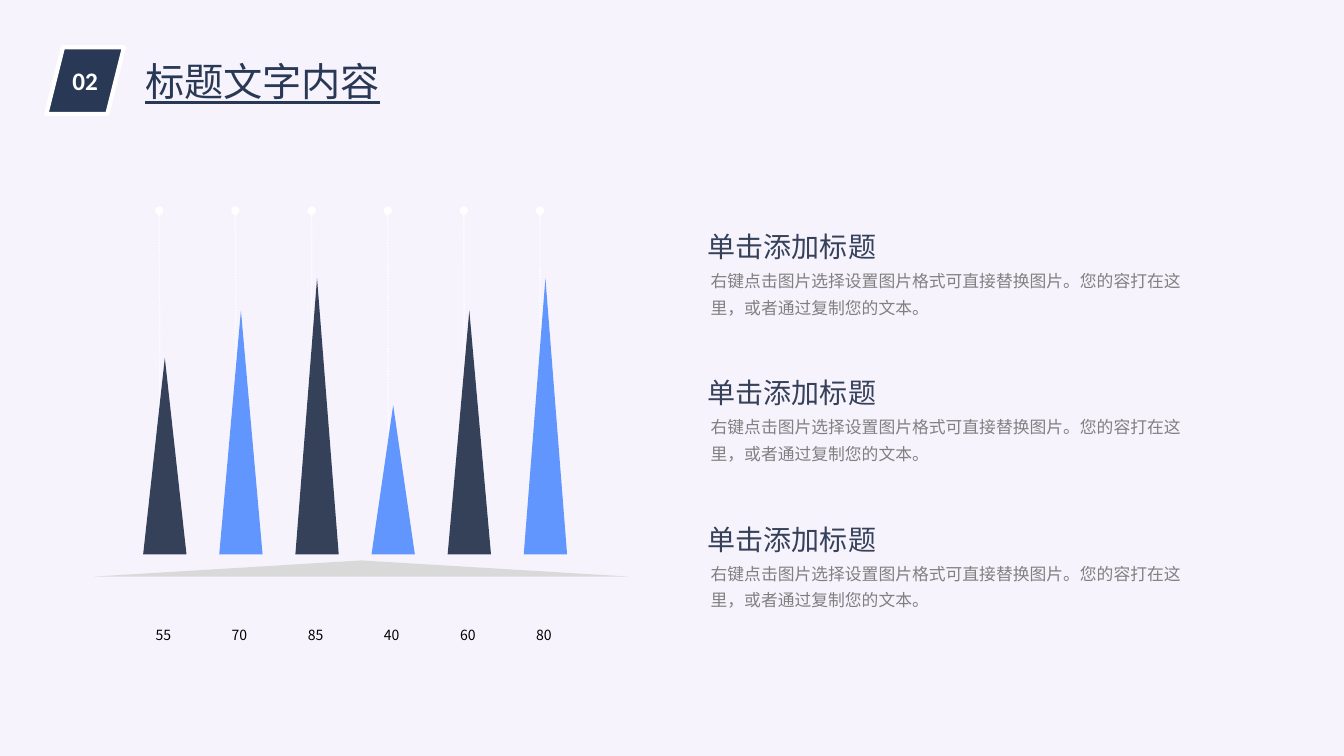
from lxml.etree import SubElement
from pptx import Presentation
from pptx.dml.color import RGBColor
from pptx.enum.dml import MSO_LINE
from pptx.enum.shapes import MSO_CONNECTOR, MSO_SHAPE as SHAPE
from pptx.enum.text import MSO_ANCHOR as ANCHOR, MSO_AUTO_SIZE as AUTO, PP_ALIGN as ALIGN
from pptx.oxml.ns import qn
from pptx.util import Inches, Pt

NAVY = RGBColor(0x28, 0x38, 0x55)
SLATE = RGBColor(0x34, 0x41, 0x59)
BLUE = RGBColor(0x61, 0x96, 0xFF)
GREY = RGBColor(0x80, 0x80, 0x80)
SILVER = RGBColor(0xD9, 0xD9, 0xD9)
WHITE = RGBColor(0xFF, 0xFF, 0xFF)
BLACK = RGBColor(0, 0, 0)
LILAC = RGBColor(0xF7, 0xF3, 0xFD)
CJK = "Noto Sans CJK SC"

COL = 0.755
BASE = 5.5
ROW = 1.45
VALUES = [55, 70, 85, 40, 60, 80]
HEIGHTS = [1.95, 2.42, 2.74, 1.48, 2.42, 2.74]
HEADING = "单击添加标题"
DETAIL = "右键点击图片选择设置图片格式可直接替换图片。您的容打在这里，或者通过复制您的文本。"


def add_shape(shapes, kind, box, fill=None):
    sp = shapes.add_shape(kind, *map(Inches, box))
    sp.shadow.inherit = False
    sp.line.fill.background()
    if fill is None:
        sp.fill.background()
    else:
        sp.fill.solid()
        sp.fill.fore_color.rgb = fill
    return sp


def set_text(sp, text, size, color, font=CJK, align=ALIGN.LEFT, spacing=1.0, inset=(0.1, 0.05),
             anchor=ANCHOR.TOP, wrap=True):
    tf = sp.text_frame
    tf.text = text
    tf.word_wrap = wrap
    tf.auto_size = AUTO.NONE
    tf.vertical_anchor = anchor
    tf.margin_left = tf.margin_right = Inches(inset[0])
    tf.margin_top = tf.margin_bottom = Inches(inset[1])
    p = tf.paragraphs[0]
    p.alignment = align
    p.line_spacing = spacing
    r = p.runs[0]
    r.font.size = Pt(size)
    r.font.name = font
    r.font.color.rgb = color
    SubElement(r.font._element, qn("a:ea"), typeface=font)
    return r


prs = Presentation()
prs.slide_width, prs.slide_height = Inches(13.33), Inches(7.5)
s = prs.slides.add_slide(prs.slide_layouts[5])
s.background.fill.solid()
s.background.fill.fore_color.rgb = LILAC

badge = add_shape(s.shapes, SHAPE.PARALLELOGRAM, (0.46, 0.47, 0.77, 0.66), NAVY)
badge.line.color.rgb = WHITE
badge.line.width = Pt(3)
r = set_text(badge, "02", 18, WHITE, "Calibri", ALIGN.CENTER, anchor=ANCHOR.MIDDLE, wrap=False)
r.font.bold = True

title = s.shapes.title
title.left, title.top, title.width, title.height = map(Inches, (1.23, 0.52, 2.75, 0.57))
r = set_text(title, "标题文字内容", 28, NAVY, align=ALIGN.CENTER)
r.font.underline = True

chart = s.shapes.add_group_shape().shapes
add_shape(chart, SHAPE.ISOSCELES_TRIANGLE, (0.94, 5.56, 5.29, 0.16), SILVER)
for i, (value, height) in enumerate(zip(VALUES, HEIGHTS)):
    x = i * COL
    stem = chart.add_connector(MSO_CONNECTOR.STRAIGHT, Inches(1.59 + x), Inches(5.48),
                               Inches(1.58 + x), Inches(2.09))
    stem.line.color.rgb = WHITE
    stem.line.width = Pt(1)
    stem.line.dash_style = MSO_LINE.ROUND_DOT
    SubElement(stem.line._get_or_add_ln(), qn("a:tailEnd"), type="oval")
    SubElement(stem._element.spPr, qn("a:effectLst"))
    add_shape(chart, SHAPE.ISOSCELES_TRIANGLE, (1.42 + x, BASE - height, 0.43, height),
              BLUE if i % 2 else SLATE)
    label = add_shape(chart, SHAPE.ISOSCELES_TRIANGLE, (1.46 + x, 5.78, 0.32, 0.8))
    set_text(label, str(value), 10, BLACK, align=ALIGN.CENTER, spacing=1.2, inset=(0, 0), wrap=False)

for i in range(3):
    y = i * ROW
    item = s.shapes.add_group_shape().shapes
    detail = item.add_textbox(*map(Inches, (6.95, 2.58 + y, 5.02, 0.62)))
    set_text(detail, DETAIL, 12, GREY, spacing=1.3)
    heading = item.add_textbox(*map(Inches, (6.82, 2.08 + y, 3.32, 0.6)))
    set_text(heading, HEADING, 20, SLATE, spacing=1.3, inset=(0.2, 0.1))

prs.save("out.pptx")
